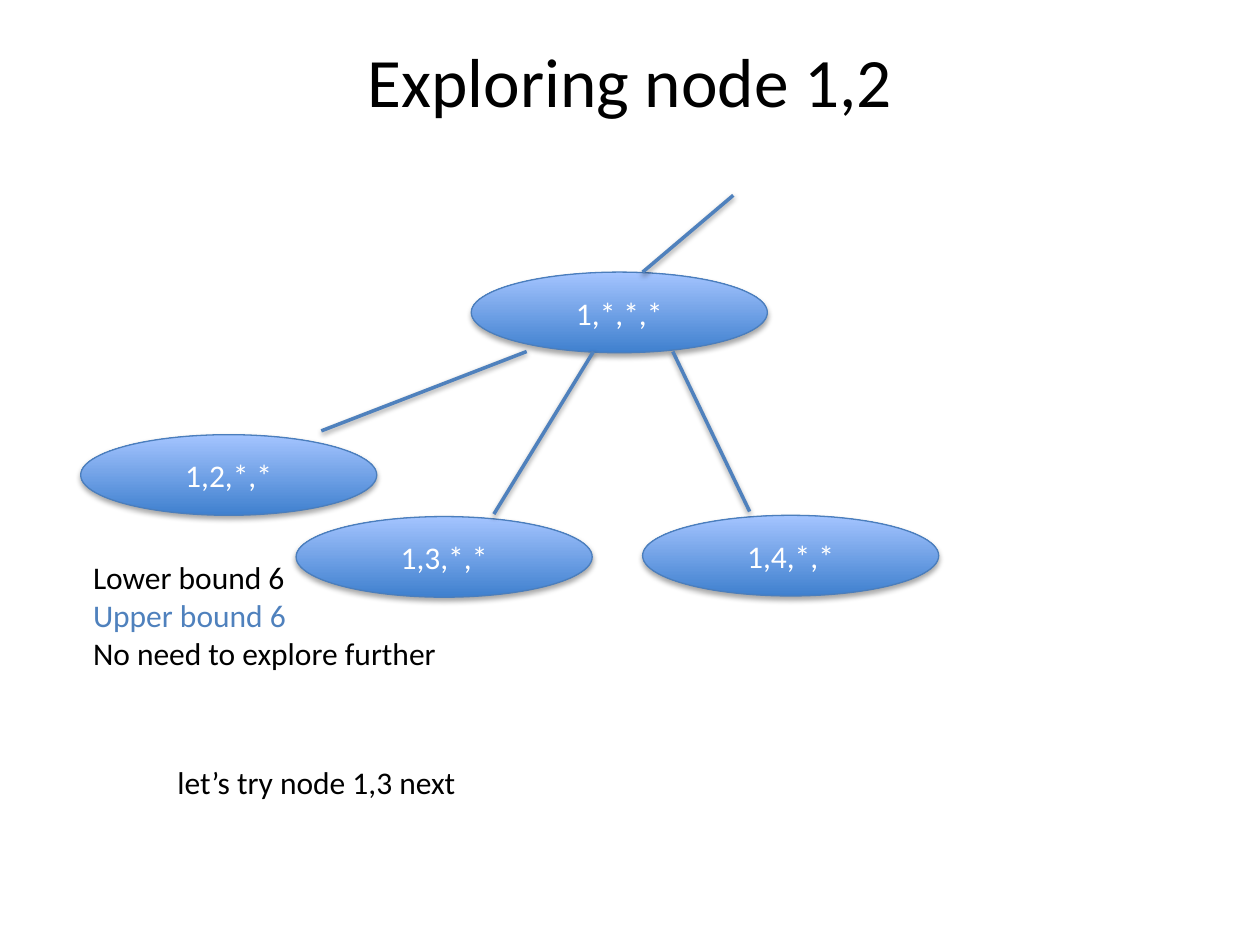
from lxml import etree
from pptx import Presentation
from pptx.dml.color import RGBColor
from pptx.enum.shapes import MSO_CONNECTOR as CONNECTOR, MSO_SHAPE as SHAPE
from pptx.enum.text import MSO_ANCHOR as ANCHOR, PP_ALIGN as ALIGN
from pptx.oxml.ns import qn
from pptx.util import Inches, Pt

COLORS = {"text": "000000", "node_text": "FFFFFF", "accent": "4F81BD",
          "node_bottom": "3F80CE", "node_top": "A4C4FF",
          "node_line": "4B7EBC", "shadow": "000000"}
NODE_SIZE = (2.35, 0.64)


def rgb(name):
    return RGBColor.from_string(COLORS[name])


def write_lines(frame, lines, size=18, align=ALIGN.LEFT, **frame_format):
    for key, value in frame_format.items():
        setattr(frame, key, value)
    for i, (words, color) in enumerate(lines):
        paragraph = frame.paragraphs[0] if i == 0 else frame.add_paragraph()
        paragraph.alignment = align
        run = paragraph.add_run()
        run.text = words
        for key, value in {"name": "Calibri", "size": Pt(size)}.items():
            setattr(run.font, key, value)
        run.font.color.rgb = rgb(color)


def add_shadow(part, distance, opacity):
    """Soft shadow straight below; call after fill and line are set."""
    effects = etree.SubElement(part._element.spPr, qn("a:effectLst"))
    shadow = etree.SubElement(effects, qn("a:outerShdw"), blurRad=str(Pt(3.15)),
                              dist=str(Pt(distance)), dir="5400000", rotWithShape="0")
    color = etree.SubElement(shadow, qn("a:srgbClr"), val=COLORS["shadow"])
    etree.SubElement(color, qn("a:alpha"), val=str(opacity * 1000))


def add_text(slide, box, lines, **text_format):
    textbox = slide.shapes.add_textbox(*map(Inches, box))
    write_lines(textbox.text_frame, lines, **text_format)


def add_node(slide, box, label):
    node = slide.shapes.add_shape(SHAPE.OVAL, *map(Inches, box))
    node.fill.gradient()
    node.fill.gradient_angle = 90
    for stop, color in zip(node.fill.gradient_stops, ("node_bottom", "node_top")):
        stop.color.rgb = rgb(color)
    node.line.color.rgb = rgb("node_line")
    node.line.width = Pt(0.75)
    add_shadow(node, 1.8, 35)
    write_lines(node.text_frame, [(label, "node_text")], align=ALIGN.CENTER,
                vertical_anchor=ANCHOR.MIDDLE)


def add_branch(slide, start, end):
    branch = slide.shapes.add_connector(CONNECTOR.STRAIGHT, *map(Inches, start + end))
    branch.line.color.rgb = rgb("accent")
    branch.line.width = Pt(2)
    add_shadow(branch, 1.6, 38)


def add_tree(slide, box):
    """Search tree; node and branch places are offsets from the box corner."""
    left, top = box[:2]

    def place(x, y):
        return left + x, top + y

    nodes = {"1,*,*,*": (3.1, 0.61), "1,4,*,*": (4.46, 2.54),
             "1,3,*,*": (1.71, 2.55), "1,2,*,*": (0, 1.9)}
    for label, corner in nodes.items():
        add_node(slide, place(*corner) + NODE_SIZE, label)

    branches = [((3.54, 1.24), (1.91, 1.87)), ((4.07, 1.24), (3.28, 2.53)),
                ((4.7, 1.24), (5.31, 2.51)), ((4.46, 0.61), (5.18, 0))]
    for start, end in branches:
        add_branch(slide, place(*start), place(*end))


def main():
    deck = Presentation()
    deck.slide_width, deck.slide_height = Inches(10), Inches(7.5)
    slide = deck.slides.add_slide(deck.slide_layouts[6])

    # Title
    add_text(slide, (0.5, 0.3, 9, 1.25), [("Exploring node 1,2", "text")], size=39.6,
             align=ALIGN.CENTER, word_wrap=True, margin_top=0)
    # Search tree
    add_tree(slide, (0.64, 1.55, 6.81, 3.19))
    # Next step and bounds
    add_text(slide, (1.31, 6.01, 2.51, 0.71), [("let’s try node 1,3 next", "text")],
             word_wrap=False)
    add_text(slide, (0.64, 4.38, 2.96, 1.01),
             [("Lower bound 6", "text"), ("Upper bound 6", "accent"),
              ("No need to explore further", "text")], word_wrap=False)
    deck.save("out.pptx")


if __name__ == "__main__":
    main()
